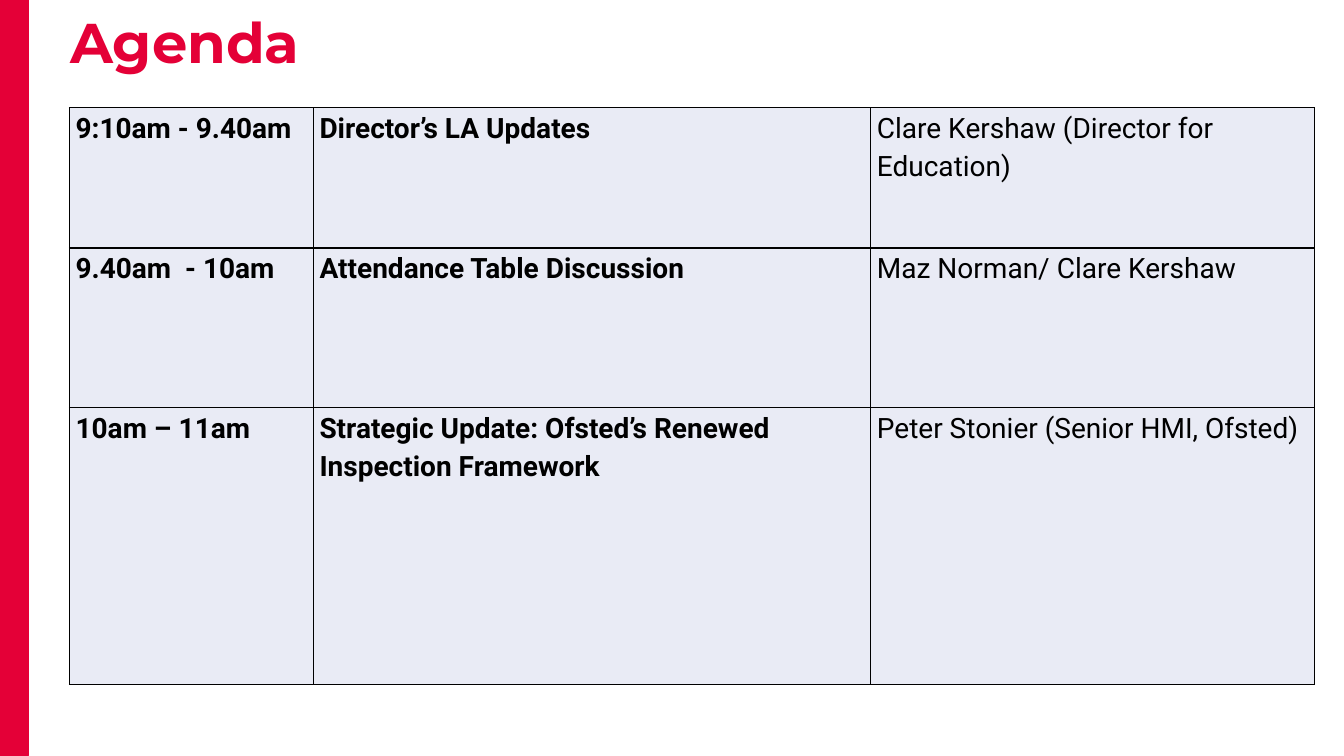
from lxml.etree import SubElement
from pptx import Presentation
from pptx.dml.color import RGBColor
from pptx.enum.shapes import MSO_SHAPE
from pptx.oxml.ns import qn
from pptx.util import Pt

RED, BLACK, PALE = "E40037", "000000", "E9EBF5"
COLUMNS = [174.24, 398.16, 316.8]
ROWS = [100.08, 113.76, 198]
AGENDA = [
    ("9:10am - 9.40am", "Director’s LA Updates",
     "Clare Kershaw (Director for Education)"),
    ("9.40am  - 10am", "Attendance Table Discussion",
     "Maz Norman/ Clare Kershaw"),
    ("10am – 11am", "Strategic Update: Ofsted’s Renewed Inspection Framework",
     "Peter Stonier (Senior HMI, Ofsted)"),
]


def rgb(color):
    """Turn a hex string into a colour."""
    return RGBColor.from_string(color)


def add_run(p, text, font, size, color, bold):
    """Add one formatted run to a paragraph."""
    r = p.add_run()
    r.text = text
    r.font.name = font
    r.font.size = Pt(size)
    r.font.bold = bold
    r.font.color.rgb = rgb(color)


def add_bar(s, x, y, w, h, color):
    """Add a solid rectangle with a line of the same colour."""
    sp = s.shapes.add_shape(MSO_SHAPE.RECTANGLE, Pt(x), Pt(y), Pt(w), Pt(h))
    sp.shadow.inherit = False
    sp.fill.solid()
    sp.fill.fore_color.rgb = rgb(color)
    sp.line.color.rgb = rgb(color)
    sp.line.width = Pt(0.75)


def add_title(s, text, x, y, w, h):
    """Add the slide heading."""
    tf = s.shapes.add_textbox(Pt(x), Pt(y), Pt(w), Pt(h)).text_frame
    tf.word_wrap = True
    tf.margin_top = Pt(5.5)
    add_run(tf.paragraphs[0], text, "Montserrat", 40, RED, True)


def add_borders(cell, color, width):
    """Draw all four borders of a cell, ahead of its fill."""
    tc_pr = cell._tc.get_or_add_tcPr()
    for i, side in enumerate(("lnL", "lnR", "lnT", "lnB")):
        ln = SubElement(tc_pr, qn(f"a:{side}"), w=str(Pt(width)))
        fill = SubElement(ln, qn("a:solidFill"))
        SubElement(fill, qn("a:srgbClr"), val=color)
        tc_pr.insert(i, ln)


def fill_cell(cell, text, bold, space_after):
    """Format one agenda cell and write its text."""
    cell.margin_left = cell.margin_right = Pt(4.32)
    cell.margin_top = cell.margin_bottom = Pt(0)
    cell.fill.solid()
    cell.fill.fore_color.rgb = rgb(PALE)
    add_borders(cell, BLACK, 1)
    p = cell.text_frame.paragraphs[0]
    p.line_spacing = 1.15
    p.space_after = Pt(space_after)
    add_run(p, text, "Roboto", 20, BLACK, bold)


def add_agenda(s, x, y):
    """Add the table of times, topics and speakers."""
    table = s.shapes.add_table(
        len(ROWS), len(COLUMNS), Pt(x), Pt(y), Pt(sum(COLUMNS)), Pt(sum(ROWS))
    ).table
    table.first_row = table.horz_banding = False
    for column, width in zip(table.columns, COLUMNS):
        column.width = Pt(width)
    for i, (height, texts) in enumerate(zip(ROWS, AGENDA)):
        table.rows[i].height = Pt(height)
        for j, text in enumerate(texts):
            fill_cell(table.cell(i, j), text, j < 2, 10 if j == 0 else 0)


def main():
    """Build the agenda slide."""
    prs = Presentation()
    prs.slide_width, prs.slide_height = Pt(960), Pt(540)
    s = prs.slides.add_slide(prs.slide_layouts[6])
    add_agenda(s, 49.68, 77.04)
    add_title(s, "Agenda", 43.2, 0, 646.56, 41.76)
    add_bar(s, 0, 0, 20.16, 540, RED)
    prs.save("out.pptx")


if __name__ == "__main__":
    main()
